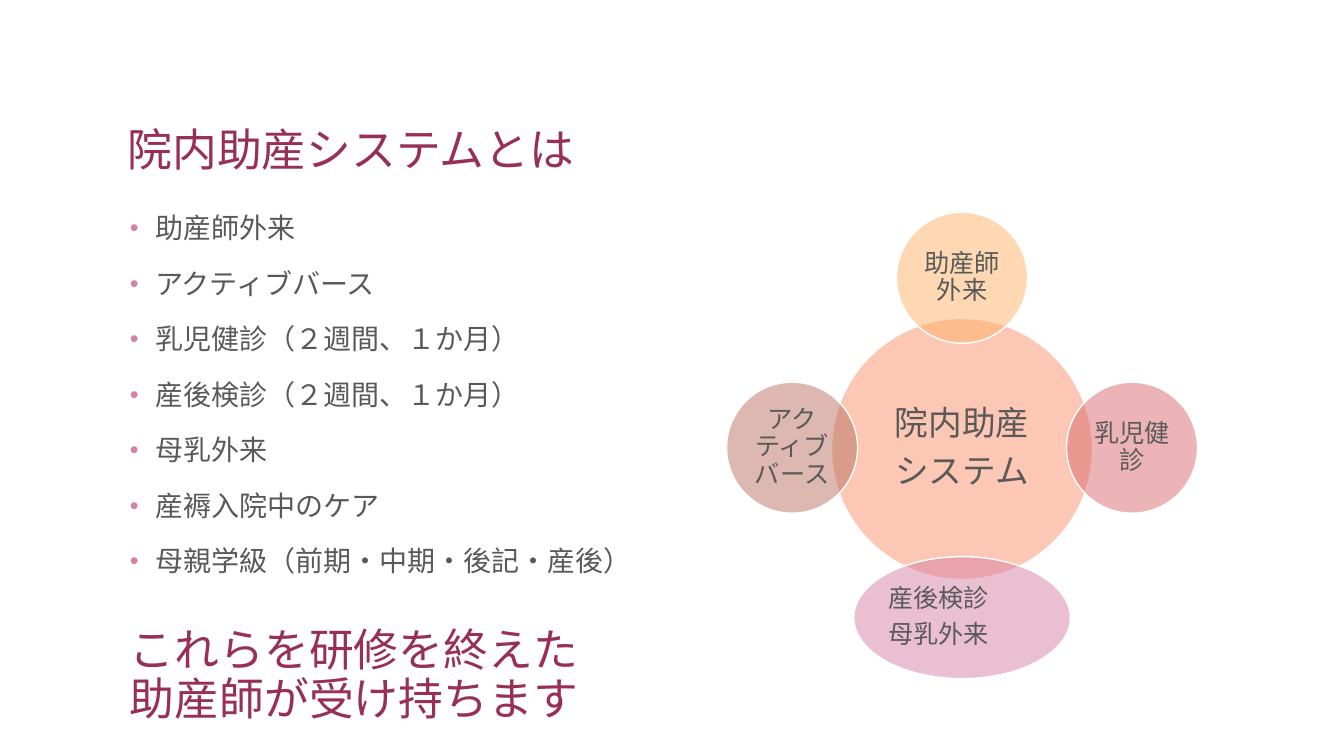
from lxml.etree import SubElement
from pptx import Presentation
from pptx.dml.color import RGBColor
from pptx.enum.shapes import MSO_SHAPE
from pptx.enum.text import MSO_ANCHOR, PP_ALIGN
from pptx.oxml.ns import qn
from pptx.util import Pt

COLORS = {
    "title": "972F57", "text": "595959", "bullet": "D680A5", "white": "FFFFFF",
    "coral": "FA906A", "orange": "FCB268", "red": "DB6B70",
    "pink": "D680A5", "brown": "BA7362",
}


def rgb(name):
    return RGBColor.from_string(COLORS[name])


def write(tf, text, size, color="text", align=PP_ALIGN.LEFT, anchor=MSO_ANCHOR.TOP,
          before=0, after=0, bullet=False, font="Noto Sans CJK JP"):
    """Fill a text frame, one paragraph per line of text."""
    tf.word_wrap = True
    tf.vertical_anchor = anchor
    for i, line in enumerate(text.split("\n")):
        p = tf.add_paragraph() if i else tf.paragraphs[0]
        p.alignment = align
        p.line_spacing = 0.9
        p.space_before = Pt(before if i else 0)
        p.space_after = Pt(after)
        if bullet:
            pPr = p._p.get_or_add_pPr()
            pPr.set("marL", str(Pt(18)))
            pPr.set("indent", str(-Pt(18)))
            clr = SubElement(pPr, qn("a:buClr"))
            SubElement(clr, qn("a:srgbClr"), val=COLORS["bullet"])
            SubElement(pPr, qn("a:buSzPct"), val="90000")
            SubElement(pPr, qn("a:buFont"), typeface="Arial")
            SubElement(pPr, qn("a:buChar"), char="•")
        r = p.add_run()
        r.text = line
        r.font.size = Pt(size)
        r.font.name = font
        r.font.color.rgb = rgb(color)
        SubElement(r._r.get_or_add_rPr(), qn("a:ea"), typeface=font)


class Deck:
    def __init__(self):
        self.prs = Presentation()
        self.prs.slide_width, self.prs.slide_height = Pt(960), Pt(540)
        self.s = self.prs.slides.add_slide(self.prs.slide_layouts[6])

    def text(self, x, y, w, h, text, size, **fmt):
        sp = self.s.shapes.add_textbox(Pt(x), Pt(y), Pt(w), Pt(h))
        write(sp.text_frame, text, size, **fmt)

    def circle(self, cx, cy, w, h, fill, text, size, align=PP_ALIGN.CENTER):
        """Half-transparent ellipse around a centre point."""
        sp = self.s.shapes.add_shape(
            MSO_SHAPE.OVAL, Pt(cx - w / 2), Pt(cy - h / 2), Pt(w), Pt(h))
        sp.shadow.inherit = False
        sp.fill.solid()
        sp.fill.fore_color.rgb = rgb(fill)
        clr = sp._element.spPr.find(qn("a:solidFill")).find(qn("a:srgbClr"))
        SubElement(clr, qn("a:alpha"), val="50000")
        sp.line.color.rgb = rgb("white")
        sp.line.width = Pt(1)
        tf = sp.text_frame
        tf.margin_left = tf.margin_right = tf.margin_top = tf.margin_bottom = Pt(2)
        write(tf, text, size, align=align, anchor=MSO_ANCHOR.MIDDLE, after=size * 0.35)


def main():
    deck = Deck()

    # Title
    deck.text(84, 36, 792, 93.6, "院内助産システムとは", 32,
              color="title", anchor=MSO_ANCHOR.BOTTOM)

    # Bullet list
    services = ["助産師外来", "アクティブバース", "乳児健診（２週間、１か月）",
                "産後検診（２週間、１か月）", "母乳外来", "産褥入院中のケア",
                "母親学級（前期・中期・後記・産後）"]
    deck.text(85.7, 149.8, 384.5, 288.7, "\n".join(services), 20, before=18, bullet=True)

    # Radial diagram: hub, then satellites clockwise from the top
    cx, cy, orbit, d = 687.2, 319.8, 121.4, 93.6
    deck.circle(cx, cy + 0.9, 186.5, 186.5, "coral", "院内助産\nシステム", 24)
    satellites = [
        (0, -1, d, d, "orange", "助産師外来", PP_ALIGN.CENTER),
        (1, 0, d, d, "red", "乳児健診", PP_ALIGN.CENTER),
        (0, 1, 154.8, 87.1, "pink", "産後検診\n母乳外来", PP_ALIGN.LEFT),
        (-1, 0, d, d, "brown", "アクティブバース", PP_ALIGN.CENTER),
    ]
    for dx, dy, w, h, fill, text, align in satellites:
        deck.circle(cx + dx * orbit, cy + dy * orbit, w, h, fill, text, 18, align)

    # Closing message
    deck.text(85.7, 427.7, 792, 93.6, "これらを研修を終えた\n助産師が受け持ちます", 32,
              color="title", anchor=MSO_ANCHOR.BOTTOM)

    deck.prs.save("out.pptx")


if __name__ == "__main__":
    main()
